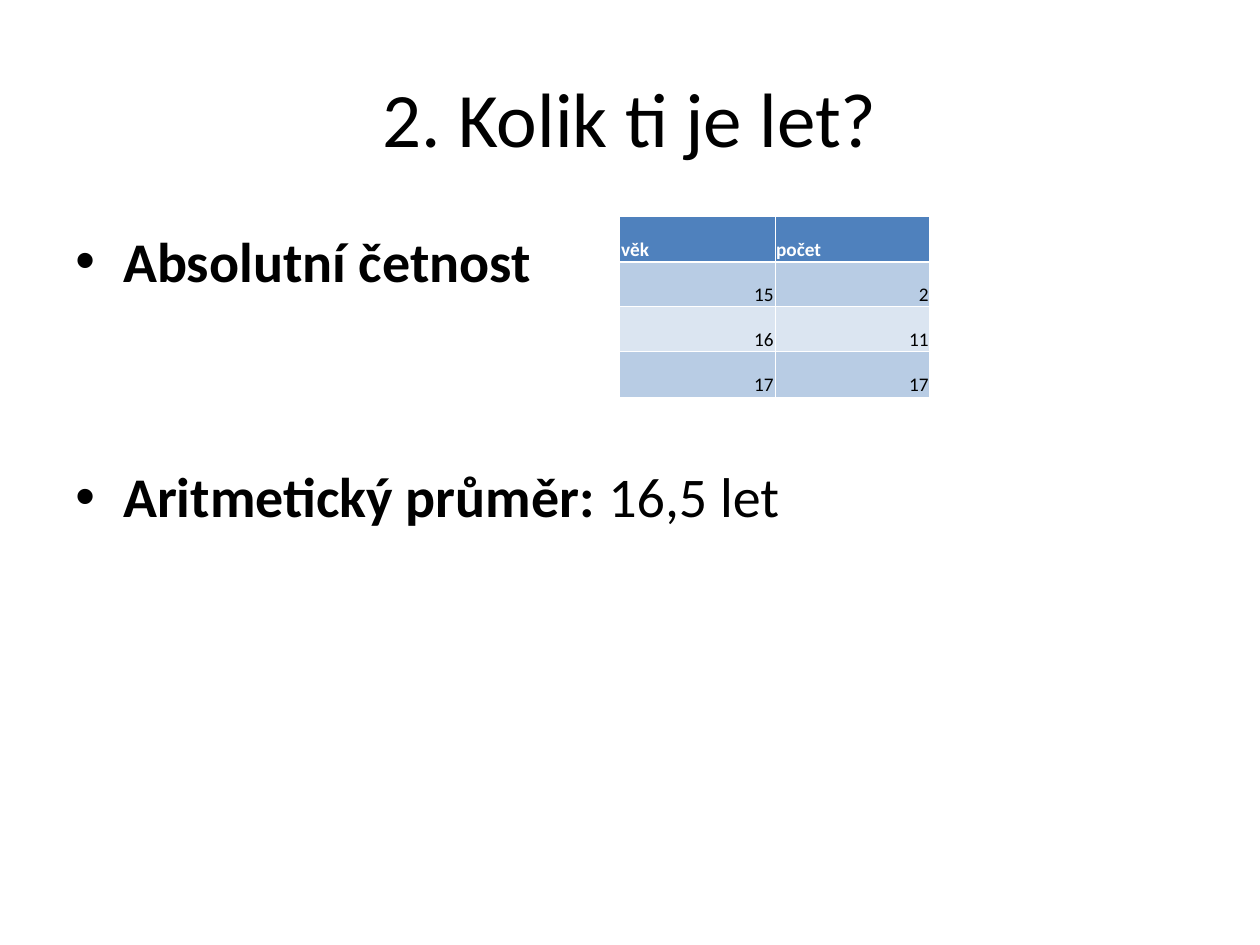
from dataclasses import dataclass

from pptx import Presentation
from pptx.dml.color import RGBColor
from pptx.enum.text import MSO_ANCHOR as Anchor, PP_ALIGN as Align
from pptx.oxml.ns import qn
from pptx.util import Inches, Pt
from lxml.etree import SubElement


@dataclass(frozen=True)
class Theme:
    """Colours, font and type sizes of the deck."""
    font: str = "Calibri"
    black: str = "000000"
    white: str = "FFFFFF"
    header: str = "4F81BD"
    bands: tuple = ("B8CCE4", "DBE5F1")
    title_size: int = 44
    body_size: int = 32
    table_size: int = 11


THEME = Theme()


def add_span(para, text, size, color=THEME.black, bold=False):
    """Append one formatted run to a paragraph."""
    span = para.add_run()
    span.text = text
    span.font.name = THEME.font
    span.font.size = Pt(size)
    span.font.bold = bold
    span.font.color.rgb = RGBColor.from_string(color)


def add_frame(page, box, anchor):
    """Add a wrapping text box and return its text frame."""
    frame = page.shapes.add_textbox(*map(Inches, box)).text_frame
    frame.word_wrap = True
    frame.vertical_anchor = anchor
    return frame


def add_title(page, box, text):
    """Place the centred title."""
    para = add_frame(page, box, Anchor.MIDDLE).paragraphs[0]
    para.alignment = Align.CENTER
    add_span(para, text, THEME.title_size)


def set_bullet(para, indent):
    """Give a paragraph a hanging round bullet."""
    props = para._p.get_or_add_pPr()
    props.set("marL", str(indent))
    props.set("indent", str(-indent))
    SubElement(props, qn("a:buFont"), typeface="Arial")
    SubElement(props, qn("a:buChar"), char="•")


def add_bullets(page, box, items):
    """Place bullets given as space before and a list of text and weight."""
    frame = add_frame(page, box, Anchor.TOP)
    for index, (space, spans) in enumerate(items):
        para = frame.add_paragraph() if index else frame.paragraphs[0]
        para.space_before = Pt(space)
        set_bullet(para, Inches(0.38))
        for text, bold in spans:
            add_span(para, text, THEME.body_size, bold=bold)


def set_border(cell, side, width):
    """Draw one white cell border, or none when the width is zero."""
    props = cell._tc.get_or_add_tcPr()
    line = SubElement(props, qn(f"a:ln{side}"), w=str(Pt(width)))
    if width:
        fill = SubElement(line, qn("a:solidFill"))
        SubElement(fill, qn("a:srgbClr"), val=THEME.white)
    else:
        SubElement(line, qn("a:noFill"))


def fill_cell(cell, value, row, column, last_row):
    """Write and format one table cell."""
    is_header = row == 0
    cell.margin_left = cell.margin_right = cell.margin_top = Inches(0.01)
    cell.margin_bottom = 0
    cell.vertical_anchor = Anchor.BOTTOM
    para = cell.text_frame.paragraphs[0]
    para.alignment = Align.LEFT if is_header else Align.RIGHT
    color = THEME.white if is_header else THEME.black
    add_span(para, value, THEME.table_size, color, is_header)
    widths = {
        "L": 0.5 if column else 0,
        "R": 0.5,
        "T": (0, 1.5)[row] if row < 2 else 0.5,
        "B": 1.5 if is_header else 0 if row == last_row else 0.5,
    }
    for side, width in widths.items():
        set_border(cell, side, width)
    band = THEME.header if is_header else THEME.bands[(row - 1) % 2]
    cell.fill.solid()
    cell.fill.fore_color.rgb = RGBColor.from_string(band)


def add_frequency_table(page, box, rows):
    """Place the table of ages and counts."""
    bounds = map(Inches, box)
    table = page.shapes.add_table(len(rows), len(rows[0]), *bounds).table
    for row, values in enumerate(rows):
        for column, value in enumerate(values):
            fill_cell(table.cell(row, column), value, row, column, len(rows) - 1)


def main():
    """Build and save the slide."""
    deck = Presentation()
    deck.slide_width, deck.slide_height = Inches(10), Inches(7.5)
    page = deck.slides.add_slide(deck.slide_layouts[6])
    add_title(page, (0.5, 0.3, 9, 1.25), "2. Kolik ti je let?")
    add_bullets(page, (0.5, 1.75, 9, 4.95), [
        (6.4, [("Absolutní četnost", True)]),
        (96, [("Aritmetický průměr: ", True), ("16,5 let", False)]),
    ])
    add_frequency_table(page, (4.92, 1.72, 2.46, 1.43), [
        ("věk", "počet"), ("15", "2"), ("16", "11"), ("17", "17"),
    ])
    deck.save("out.pptx")


if __name__ == "__main__":
    main()
